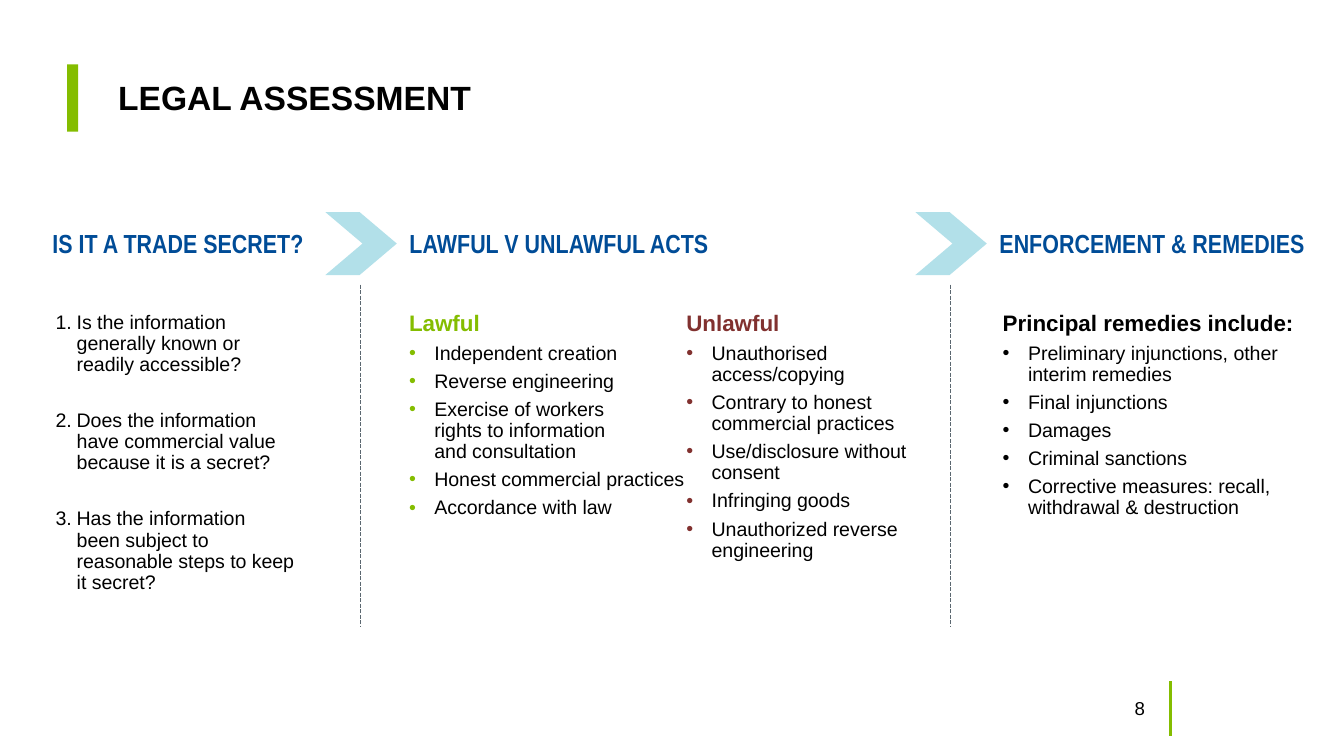
"""Build a legal assessment slide with three stages split by chevrons."""
from copy import deepcopy

from lxml import etree
from pptx import Presentation, util as u
from pptx.dml.color import RGBColor
from pptx.enum import dml, shapes, text
from pptx.oxml.ns import qn

GREEN, RED, BLUE, BLACK = "84BD00", "81312F", "004C97", "000000"
PALE_BLUE, GREY = "B2E0E9", "5B6770"


def color(value):
    return RGBColor.from_string(value)


def assign(target, values):
    for name, value in values.items():
        setattr(target, name, value)


class SlideBuilder:
    title_font = {"name": "Arial", "size": u.Pt(18), "bold": True}
    stage_font = {"name": "Arial Narrow", "size": u.Pt(14), "bold": True}
    heading_font = {"name": "Arial", "size": u.Pt(12), "bold": True}
    item_font = {"name": "Arial", "size": u.Pt(10.5), "bold": False}
    number_font = {"name": "Arial", "size": u.Pt(10), "bold": False}

    def __init__(self, slide):
        self.slide = slide

    def place(self, shape, left, top, width, height):
        assign(shape, {"left": u.Cm(left), "top": u.Cm(top),
                       "width": u.Cm(width), "height": u.Cm(height)})

    def fill_paragraph(self, paragraph, words, font, ink=BLACK, **layout):
        paragraph.text = words
        assign(paragraph, layout)
        for run in paragraph.runs:
            assign(run.font, font)
            run.font.color.rgb = color(ink)
        for line_break in paragraph._p.findall(qn("a:br")):
            line_break.append(deepcopy(paragraph.runs[0]._r.rPr))

    def indent(self, paragraph, distance):
        properties = paragraph._p.get_or_add_pPr()
        properties.set("marL", str(u.Cm(distance)))
        properties.set("indent", str(-u.Cm(distance)))
        return properties

    def bullet(self, paragraph, distance, ink, numbered=False):
        properties = self.indent(paragraph, distance)
        tint = etree.SubElement(properties, qn("a:buClr"))
        etree.SubElement(tint, qn("a:srgbClr"), val=ink)
        etree.SubElement(properties, qn("a:buFont"), typeface="Arial")
        if numbered:
            etree.SubElement(properties, qn("a:buAutoNum"), type="arabicPeriod")
        else:
            etree.SubElement(properties, qn("a:buChar"), char="•")

    def title(self, words, *box):
        shape = self.slide.shapes.title
        self.place(shape, *box)
        assign(shape.text_frame, {"vertical_anchor": text.MSO_ANCHOR.MIDDLE,
                                  "auto_size": text.MSO_AUTO_SIZE.NONE})
        self.fill_paragraph(shape.text_frame.paragraphs[0], words,
                            self.title_font, line_spacing=0.9,
                            alignment=text.PP_ALIGN.LEFT)

    def label(self, words, box, font, ink, alignment, wrap):
        shape = self.slide.shapes.add_textbox(0, 0, 0, 0)
        self.place(shape, *box)
        assign(shape.text_frame, {"word_wrap": wrap,
                                  "vertical_anchor": text.MSO_ANCHOR.MIDDLE})
        self.fill_paragraph(shape.text_frame.paragraphs[0], words, font, ink,
                            alignment=alignment)

    def item_list(self, index, box, items, heading=None, ink=BLACK, gap=3.7):
        shape = self.slide.placeholders[index]
        self.place(shape, *box)
        frame = shape.text_frame
        assign(frame, {"word_wrap": True, "auto_size": text.MSO_AUTO_SIZE.NONE,
                       "vertical_anchor": text.MSO_ANCHOR.TOP})
        assign(frame, {f"margin_{side}": u.Cm(0.03)
                       for side in ("left", "top", "right", "bottom")})
        layout = {"alignment": text.PP_ALIGN.LEFT, "line_spacing": 0.9,
                  "space_before": u.Pt(0), "space_after": u.Pt(gap)}
        paragraph = frame.paragraphs[0]
        if heading:
            etree.SubElement(self.indent(paragraph, 0), qn("a:buNone"))
            self.fill_paragraph(paragraph, heading, self.heading_font, ink,
                                **layout)
        for position, item in enumerate(items):
            if heading or position:
                paragraph = frame.add_paragraph()
            self.bullet(paragraph, 0.48 if heading else 0.4, ink, not heading)
            self.fill_paragraph(paragraph, item, self.item_font, **layout)

    def block(self, kind, fill, *box):
        shape = self.slide.shapes.add_shape(kind, 0, 0, 0, 0)
        self.place(shape, *box)
        shape.shadow.inherit = False
        shape.fill.solid()
        shape.fill.fore_color.rgb = color(fill)
        shape.line.fill.background()
        return shape

    def vertical_line(self, left, top, bottom, ink, **style):
        line = self.slide.shapes.add_connector(
            shapes.MSO_CONNECTOR.STRAIGHT,
            u.Cm(left), u.Cm(top), u.Cm(left), u.Cm(bottom))
        line.line.color.rgb = color(ink)
        assign(line.line, style)
        etree.SubElement(line._element.spPr, qn("a:effectLst"))


def main():
    presentation = Presentation()
    assign(presentation, {"slide_width": u.Cm(25.4),
                          "slide_height": u.Cm(14.29)})
    comparison = presentation.slide_layouts[4]
    builder = SlideBuilder(presentation.slides.add_slide(comparison))

    builder.vertical_line(22.12, 12.88, 13.92, GREEN, width=u.Pt(1.5))
    builder.block(shapes.MSO_SHAPE.RECTANGLE, GREEN, 1.27, 1.22, 0.21, 1.27)
    builder.title("LEGAL ASSESSMENT", 1.98, 1.04, 20.6, 1.7)
    builder.label("8", (20.19, 13, 1.7, 0.76), builder.number_font, BLACK,
                  text.PP_ALIGN.RIGHT, True)

    stages = [("IS IT A TRADE SECRET?", 0.74, 5.31),
              ("LAWFUL V UNLAWFUL ACTS", 7.49, 6.2),
              ("ENFORCEMENT & REMEDIES", 18.64, 6.32)]
    for words, left, width in stages:
        builder.label(words, (left, 4.17, width, 0.86), builder.stage_font,
                      BLUE, text.PP_ALIGN.LEFT, False)

    for left in (6.15, 17.3):
        chevron = builder.block(shapes.MSO_SHAPE.CHEVRON, PALE_BLUE,
                                left, 4.01, 1.35, 1.19)
        chevron.adjustments[0] = 0.59
        builder.vertical_line(left + 0.66, 5.38, 11.84, GREY, width=u.Pt(0.75),
                              dash_style=dml.MSO_LINE.SQUARE_DOT)

    top = 5.87
    builder.item_list(1, (1.02, top, 4.83, 6.65), [
        "Is the information generally known or\vreadily accessible?",
        "Does the information\vhave commercial value because it is a secret?",
        "Has the information\vbeen subject to reasonable steps to keep it secret?",
    ], gap=18.7)
    builder.item_list(2, (7.7, top, 5.27, 4.78), [
        "Independent creation",
        "Reverse engineering",
        "Exercise of workers\vrights to information\vand consultation",
        "Honest commercial practices",
        "Accordance with law",
    ], "Lawful", GREEN)
    builder.item_list(3, (12.94, top, 5.2, 4.78), [
        "Unauthorised access/copying",
        "Contrary to honest commercial practices",
        "Use/disclosure without consent",
        "Infringing goods",
        "Unauthorized reverse engineering",
    ], "Unlawful", RED)
    builder.item_list(4, (18.92, top, 5.69, 6.38), [
        "Preliminary injunctions, other interim remedies",
        "Final injunctions",
        "Damages",
        "Criminal sanctions",
        "Corrective measures: recall, withdrawal & destruction",
    ], "Principal remedies include:")

    presentation.save("out.pptx")


if __name__ == "__main__":
    main()
